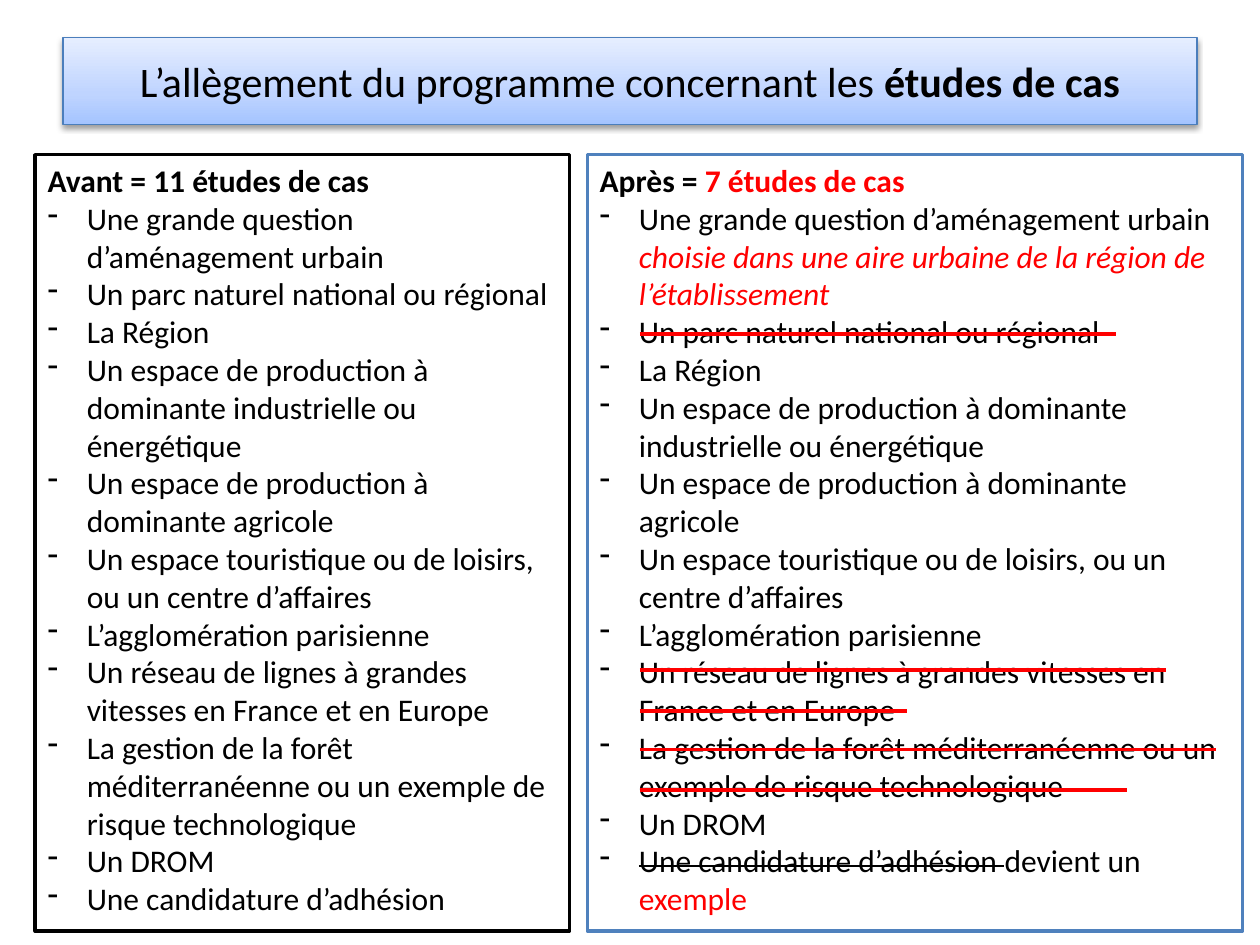
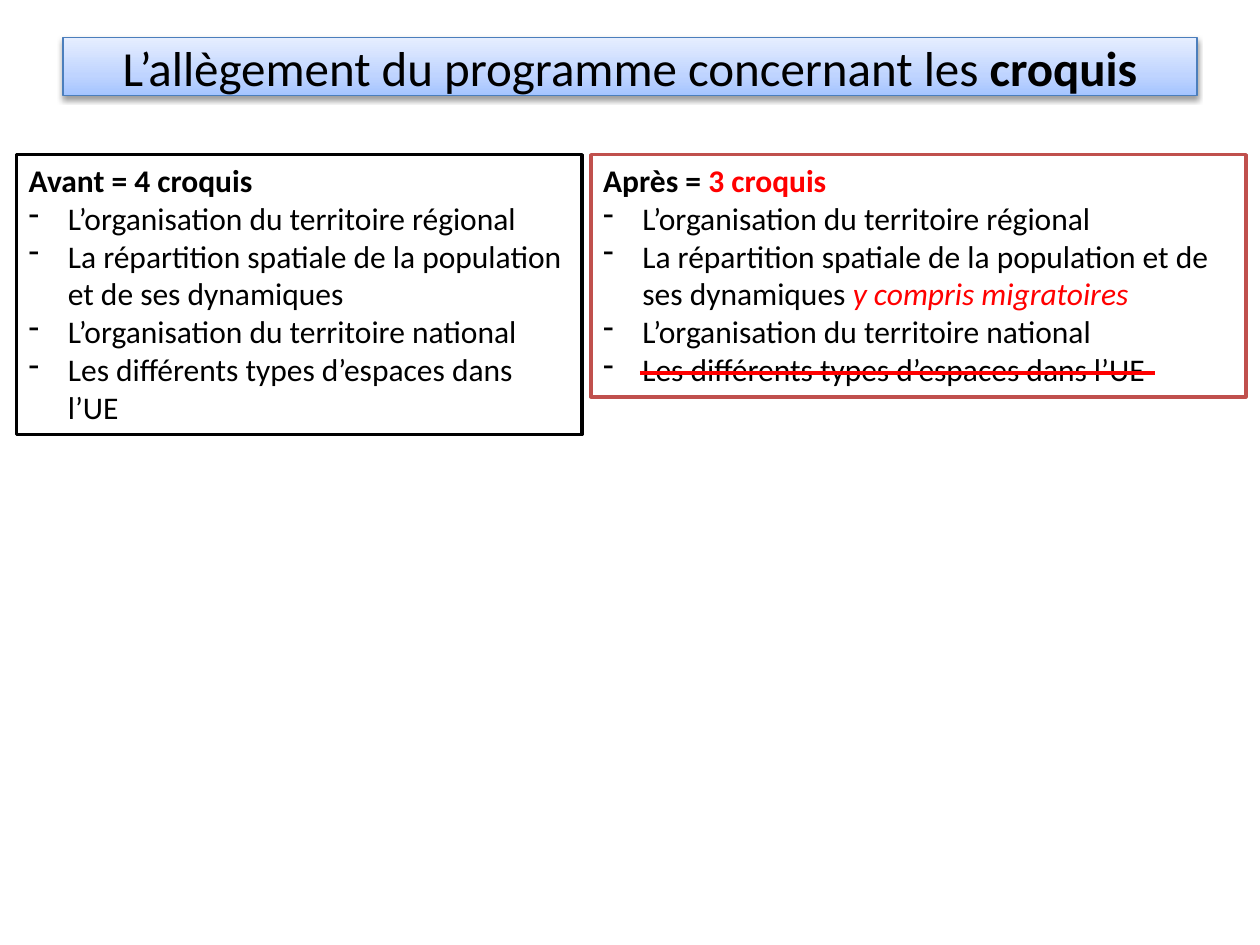
from dataclasses import dataclass
from typing import NamedTuple

from lxml import etree
from pptx import Presentation
from pptx.dml.color import RGBColor
from pptx.enum import shapes as sh, text as tx
from pptx.oxml import parse_xml
from pptx.oxml.ns import nsdecls, qn
from pptx.util import Cm, Pt


# Theme
@dataclass(frozen=True)
class Theme:
    font: str = "Calibri"
    body: int = 18
    black: str = "000000"
    white: str = "FFFFFF"
    red: str = "FF0000"
    blue: str = "4F81BD"
    brick: str = "C0504D"
    edge: str = "4B7EBC"
    band: tuple = ((0, "A4C4FF"), (35, "BFD4FF"), (100, "E6EEFF"))
    thin: float = 0.75
    thick: float = 2
    top: float = 3.12
    indent: float = 0.79


T = Theme()


# Parts of a slide
class Run(NamedTuple):
    text: str
    color: str = T.black
    bold: bool = False
    slant: bool = False
    strike: bool = False


class Panel(NamedTuple):
    left: float
    width: float
    height: float
    edge: str
    head: list
    items: list


class Mark(NamedTuple):
    y: float
    end: float


class Page(NamedTuple):
    topic: str
    size: int
    height: float
    panels: list
    marks: list


def rgb(code: str) -> RGBColor:
    return RGBColor.from_string(code)


def add_runs(para, runs: list, size: int) -> None:
    for run in runs:
        part = para.add_run()
        part.text = run.text
        font = part.font
        font.name, font.size = T.font, Pt(size)
        font.bold, font.italic = run.bold, run.slant
        font.color.rgb = rgb(run.color)
        if run.strike:
            part._r.get_or_add_rPr().set("strike", "sngStrike")


def add_dash(para) -> None:
    props = para._p.get_or_add_pPr()
    props.set("marL", str(Cm(T.indent)))
    props.set("indent", str(-Cm(T.indent)))
    etree.SubElement(props, qn("a:buFontTx"))
    etree.SubElement(props, qn("a:buChar")).set("char", "-")


def add_box(slide, left: float, top: float, width: float, height: float,
            edge: str, weight: float):
    box = slide.shapes.add_shape(sh.MSO_SHAPE.RECTANGLE, Cm(left), Cm(top),
                                 Cm(width), Cm(height))
    box.shadow.inherit = False
    box.line.color.rgb = rgb(edge)
    box.line.width = Pt(weight)
    box.text_frame.word_wrap = True
    return box


def add_title(slide, page: Page) -> None:
    box = add_box(slide, 1.27, 0.76, 22.86, page.height, T.edge, T.thin)
    box.fill.gradient()
    box.fill.gradient_angle = 90
    props = box._element.spPr
    stops = props.find(".//" + qn("a:gsLst"))
    for stop in list(stops):
        stops.remove(stop)
    for pos, code in T.band:
        stop = etree.SubElement(stops, qn("a:gs"), pos=str(pos * 1000))
        etree.SubElement(stop, qn("a:srgbClr"), val=code)
    props.find(qn("a:effectLst")).append(parse_xml(
        f'<a:outerShdw {nsdecls("a")} blurRad="{Pt(3.1)}" dist="{Pt(1.6)}" '
        f'dir="5400000" rotWithShape="0"><a:srgbClr val="{T.black}">'
        '<a:alpha val="38000"/></a:srgbClr></a:outerShdw>'))
    frame = box.text_frame
    frame.vertical_anchor = tx.MSO_ANCHOR.MIDDLE
    para = frame.paragraphs[0]
    para.alignment = tx.PP_ALIGN.CENTER
    lead = Run("L’allègement du programme concernant les ")
    add_runs(para, [lead, Run(page.topic, bold=True)], page.size)


def add_panel(slide, panel: Panel) -> None:
    box = add_box(slide, panel.left, T.top, panel.width, panel.height,
                  panel.edge, T.thick)
    box.fill.solid()
    box.fill.fore_color.rgb = rgb(T.white)
    frame = box.text_frame
    frame.auto_size = tx.MSO_AUTO_SIZE.SHAPE_TO_FIT_TEXT
    frame.vertical_anchor = tx.MSO_ANCHOR.TOP
    for num, runs in enumerate([panel.head, *panel.items]):
        para = frame.add_paragraph() if num else frame.paragraphs[0]
        para.alignment = tx.PP_ALIGN.LEFT
        if num:
            add_dash(para)
        add_runs(para, runs, T.body)


def add_mark(slide, mark: Mark) -> None:
    line = slide.shapes.add_connector(sh.MSO_CONNECTOR.STRAIGHT, Cm(12.9),
                                      Cm(mark.y), Cm(mark.end), Cm(mark.y))
    line.line.color.rgb = rgb(T.red)
    line.line.width = Pt(T.thick)
    etree.SubElement(line._element.spPr, qn("a:effectLst"))


# Wording: the later list differs from the earlier one in a few items
def before(count: str) -> list:
    return [Run(f"Avant = {count}", bold=True)]


def after(count: str) -> list:
    return [Run("Après = ", bold=True), Run(count, T.red, bold=True)]


def extend(item: list, extra: str) -> list:
    return [Run(item[0].text + " "), Run(extra, T.red, slant=True)]


CASES = [[Run(text)] for text in (
    "Une grande question d’aménagement urbain",
    "Un parc naturel national ou régional",
    "La Région",
    "Un espace de production à dominante industrielle ou énergétique",
    "Un espace de production à dominante agricole",
    "Un espace touristique ou de loisirs, ou un centre d’affaires",
    "L’agglomération parisienne",
    "Un réseau de lignes à grandes vitesses en France et en Europe",
    "La gestion de la forêt méditerranéenne ou un exemple de risque "
    "technologique",
    "Un DROM",
    "Une candidature d’adhésion",
)]
NEW_CASES = [
    extend(CASES[0], "choisie dans une aire urbaine de la région de "
                     "l’établissement"),
    *CASES[1:-1],
    [Run(CASES[-1][0].text + " ", strike=True), Run("devient un "),
     Run("exemple", T.red)],
]
MAPS = [[Run(text)] for text in (
    "L’organisation du territoire régional",
    "La répartition spatiale de la population et de ses dynamiques",
    "L’organisation du territoire national",
    "Les différents types d’espaces dans l’UE",
)]
NEW_MAPS = [MAPS[0], extend(MAPS[1], "y compris migratoires"), *MAPS[2:]]

PAGES = [
    Page("études de cas", 24, 1.75, [
        Panel(0.71, 10.77, 15.65, T.black, before("11 études de cas"), CASES),
        Panel(11.84, 13.21, 15.65, T.blue, after("7 études de cas"),
              NEW_CASES),
    ], [Mark(6.73, 22.5), Mark(13.51, 23.5), Mark(14.33, 18.29),
        Mark(15.11, 24.51), Mark(15.93, 22.71)]),
    Page("croquis", 28, 1.17, [
        Panel(0.33, 11.4, 5.64, T.black, before("4 croquis"), MAPS),
        Panel(11.91, 13.21, 4.88, T.brick, after("3 croquis"), NEW_MAPS),
    ], [Mark(7.52, 23.29)]),
]


def main() -> None:
    deck = Presentation()
    deck.slide_width, deck.slide_height = Cm(25.4), Cm(19.05)
    for page in PAGES:
        slide = deck.slides.add_slide(deck.slide_layouts[6])
        add_title(slide, page)
        for panel in page.panels:
            add_panel(slide, panel)
        for mark in page.marks:
            add_mark(slide, mark)
    deck.save("out.pptx")


if __name__ == "__main__":
    main()
